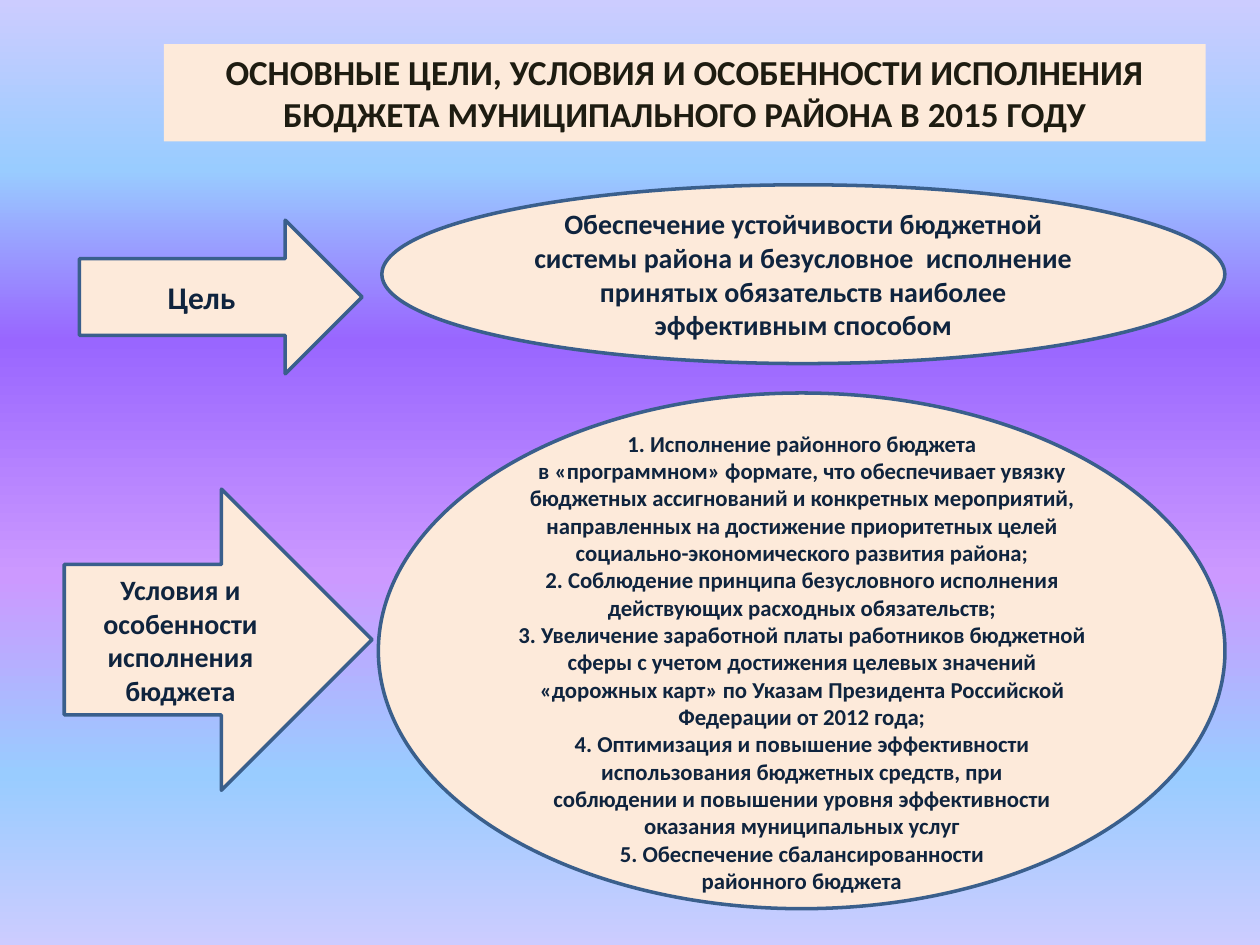
from lxml import etree
from pptx import Presentation
from pptx.dml.color import RGBColor
from pptx.enum.shapes import MSO_SHAPE
from pptx.enum.text import MSO_ANCHOR, PP_ALIGN
from pptx.oxml.ns import qn
from pptx.util import Pt

ARROW = MSO_SHAPE.RIGHT_ARROW
ELLIPSE = MSO_SHAPE.OVAL
CENTER = PP_ALIGN.CENTER
MIDDLE = MSO_ANCHOR.MIDDLE
TITLE_ONLY = 5

CREAM, BORDER, NAVY, DARK = "FDEADA", "3A5F8C", "0F243E", "1E1C11"
SKY_STOPS = [(0, "CCCCFF"), (18, "99CCFF"), (36, "9966FF"),
             (61, "CC99FF"), (82, "99CCFF"), (100, "CCCCFF")]

TITLE = ("ОСНОВНЫЕ ЦЕЛИ, УСЛОВИЯ И ОСОБЕННОСТИ ИСПОЛНЕНИЯ "
         "БЮДЖЕТА МУНИЦИПАЛЬНОГО РАЙОНА В 2015 ГОДУ")
GOAL = ["Обеспечение устойчивости бюджетной системы района и безусловное  "
        "исполнение принятых обязательств наиболее эффективным способом"]
CONDITIONS = [
    "1. Исполнение районного бюджета",
    "в «программном» формате, что обеспечивает увязку",
    "бюджетных ассигнований и конкретных мероприятий, направленных на "
    "достижение приоритетных целей социально-экономического развития района;",
    "2. Соблюдение принципа безусловного исполнения действующих расходных "
    "обязательств;",
    "3. Увеличение заработной платы работников бюджетной сферы с учетом "
    "достижения целевых значений «дорожных карт» по Указам Президента "
    "Российской Федерации от 2012 года;",
    "4. Оптимизация и повышение эффективности использования бюджетных "
    "средств, при",
    "соблюдении и повышении уровня эффективности оказания муниципальных услуг",
    "5. Обеспечение сбалансированности",
    "районного бюджета",
]


def color(hex_value):
    return RGBColor.from_string(hex_value)


def paint_background(slide, stops):
    """Fill the slide with a top-to-bottom gradient."""
    fill = slide.background.fill
    fill.gradient()
    fill.gradient_angle = 270
    stop_list = slide.element.find(".//" + qn("a:gsLst"))
    for old_stop in list(stop_list):
        stop_list.remove(old_stop)
    for percent, hex_value in stops:
        stop = etree.SubElement(stop_list, qn("a:gs"), pos=str(percent * 1000))
        etree.SubElement(stop, qn("a:srgbClr"), val=hex_value)


def write_text(shape, paragraphs, size, hex_value, top_inset=3.6):
    frame = shape.text_frame
    frame_format = {"word_wrap": True, "vertical_anchor": MIDDLE,
                    "margin_top": Pt(top_inset)}
    for name, value in frame_format.items():
        setattr(frame, name, value)
    frame.text = "\n".join(paragraphs)
    font_format = {"name": "Calibri", "size": Pt(size), "bold": True}
    for paragraph in frame.paragraphs:
        paragraph.alignment = CENTER
        for run in paragraph.runs:
            for name, value in font_format.items():
                setattr(run.font, name, value)
            run.font.color.rgb = color(hex_value)


def fill_cream(shape):
    shape.fill.solid()
    shape.fill.fore_color.rgb = color(CREAM)


def add_heading(slide, text, box):
    heading = slide.shapes.title
    for name, value in zip(("left", "top", "width", "height"), box):
        setattr(heading, name, Pt(value))
    fill_cream(heading)
    write_text(heading, [text], 20, DARK)


def add_block(slide, kind, box, paragraphs, size, top_inset=3.6):
    """Add an outlined arrow or ellipse with centred text."""
    block = slide.shapes.add_shape(kind, *map(Pt, box))
    block.shadow.inherit = False
    fill_cream(block)
    block.line.color.rgb = color(BORDER)
    block.line.width = Pt(2)
    write_text(block, paragraphs, size, NAVY, top_inset)


def main():
    deck = Presentation()
    deck.slide_width, deck.slide_height = Pt(720), Pt(540)
    slide = deck.slides.add_slide(deck.slide_layouts[TITLE_ONLY])

    paint_background(slide, SKY_STOPS)
    add_heading(slide, TITLE, (93.6, 25.2, 595.4, 55.6))

    # Goal row
    add_block(slide, ARROW, (45.4, 125.8, 161.5, 87.8), ["Цель"], 18)
    add_block(slide, ELLIPSE, (218.2, 105.6, 481.7, 102.2), GOAL, 16)

    # Conditions row
    add_block(slide, ARROW, (36.7, 279.5, 175.9, 172.1),
              ["Условия и особенности исполнения бюджета"], 16)
    add_block(slide, ELLIPSE, (216.2, 224.6, 483.8, 294.7), CONDITIONS, 13,
              top_inset=16)

    deck.save("out.pptx")


if __name__ == "__main__":
    main()
